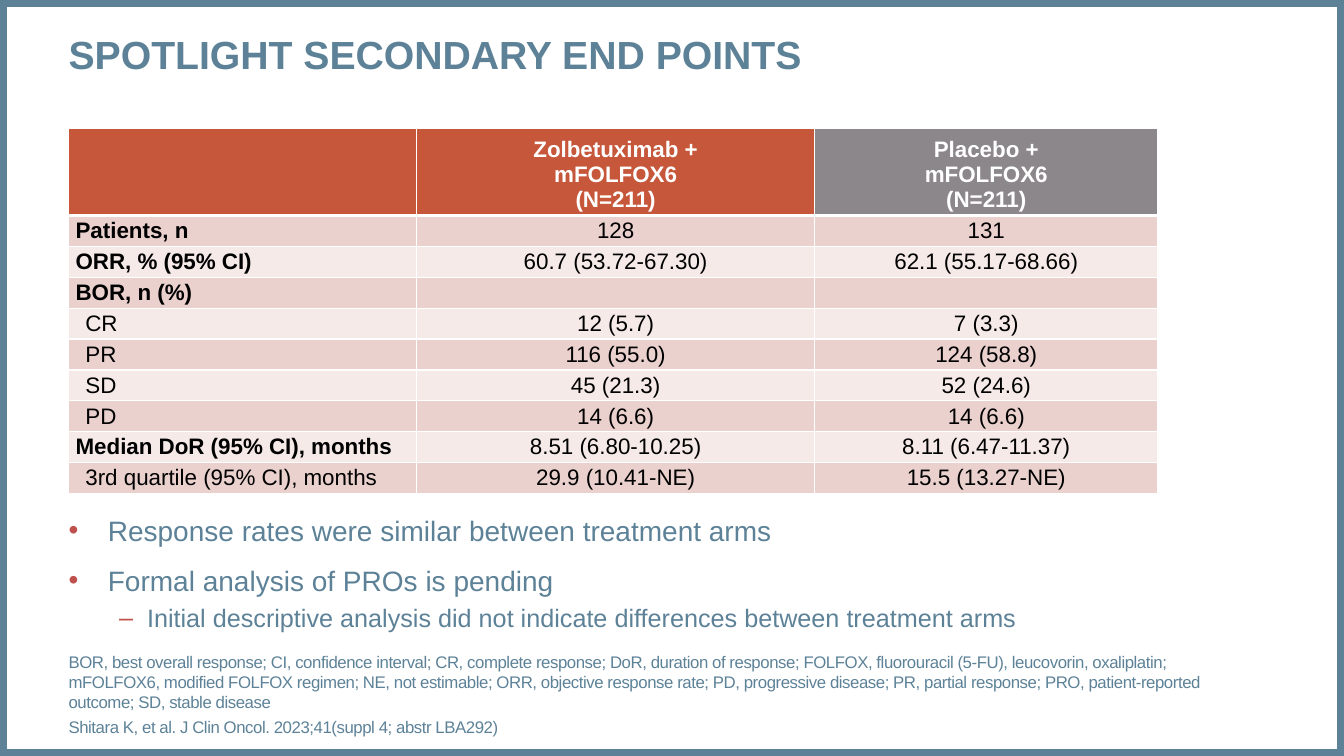
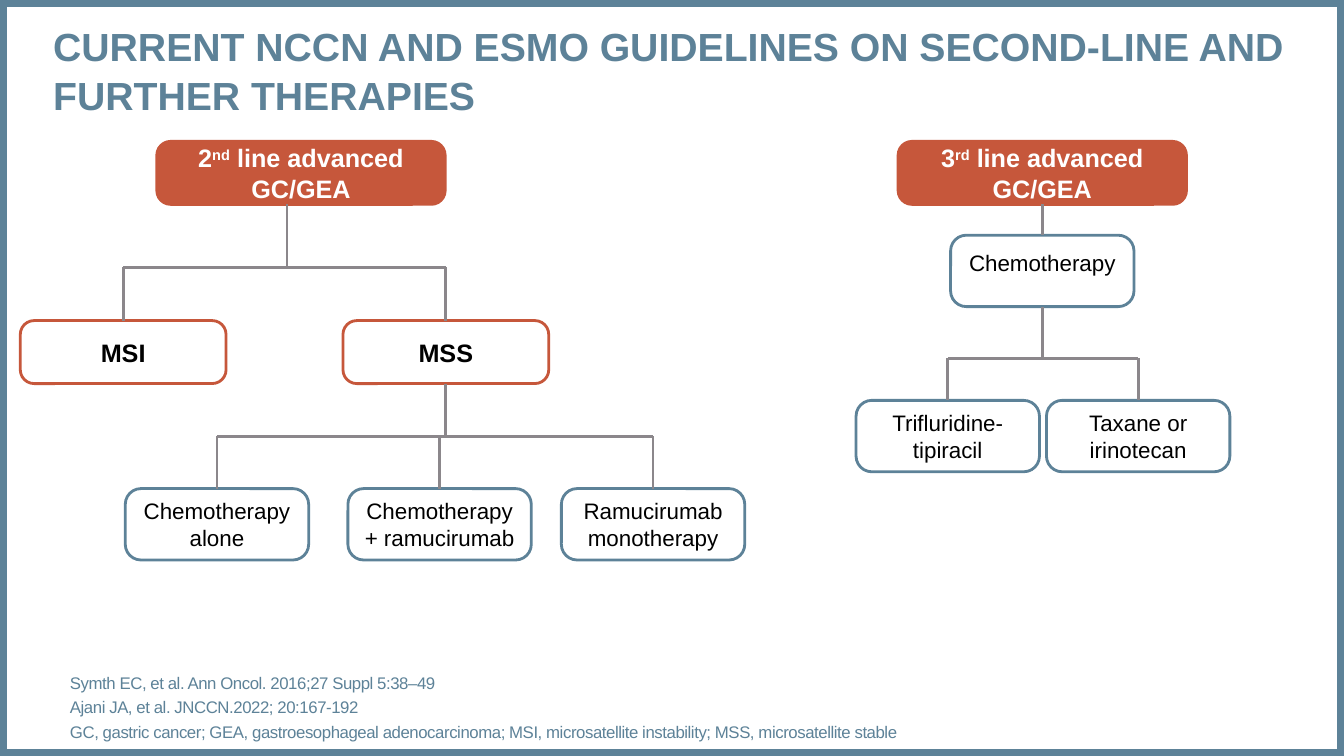
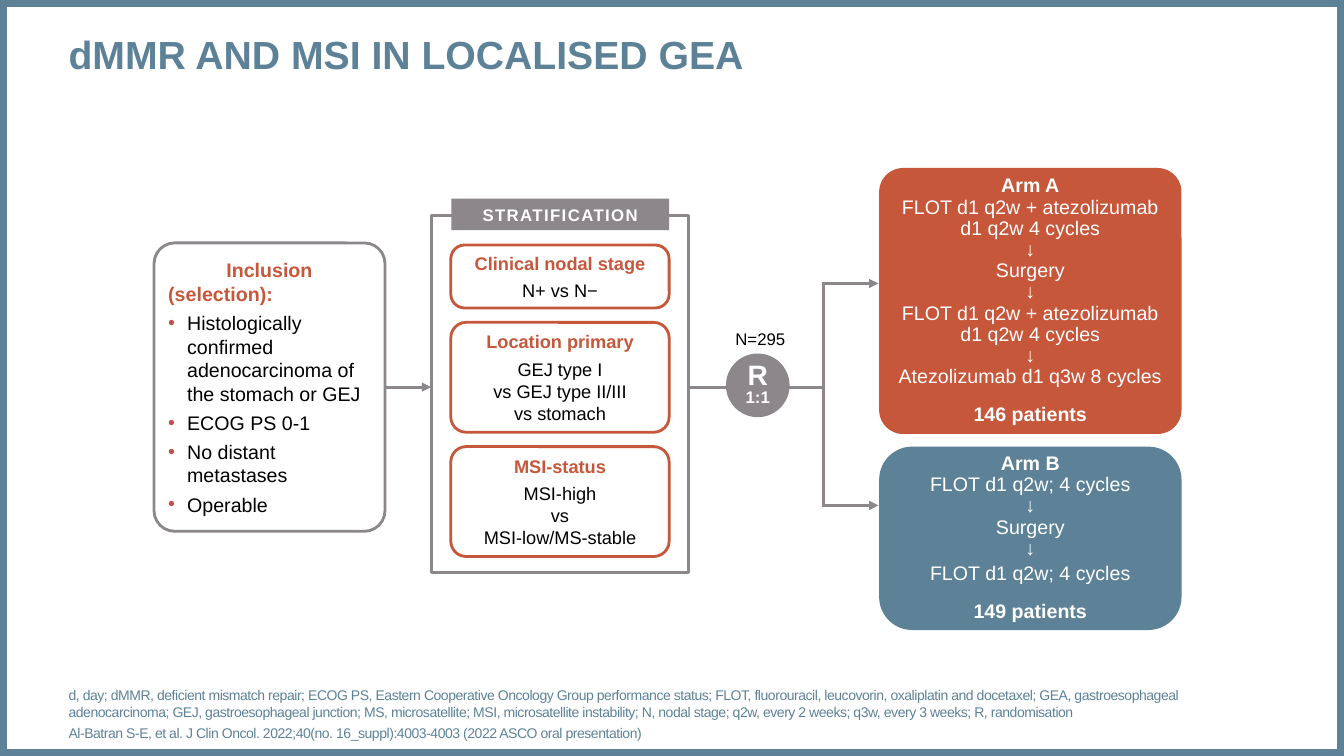
from lxml import etree
from pptx import Presentation
from pptx.dml.color import RGBColor
from pptx.enum.shapes import MSO_CONNECTOR, MSO_SHAPE
from pptx.enum.text import MSO_ANCHOR, PP_ALIGN
from pptx.oxml.ns import qn
from pptx.util import Pt

CENTER, RIGHT = PP_ALIGN.CENTER, PP_ALIGN.RIGHT
TOP, MIDDLE, BOTTOM = MSO_ANCHOR.TOP, MSO_ANCHOR.MIDDLE, MSO_ANCHOR.BOTTOM
RECT, ROUND, OVAL = MSO_SHAPE.RECTANGLE, MSO_SHAPE.ROUNDED_RECTANGLE, MSO_SHAPE.OVAL
STRAIGHT = MSO_CONNECTOR.STRAIGHT
SIDE_TOP, SIDE_BOTTOM, SIDE_RIGHT = 0, 2, 3

BLUE = RGBColor(0x5D, 0x82, 0x98)
RUST = RGBColor(0xC6, 0x57, 0x3B)
GREY = RGBColor(0x8B, 0x87, 0x8B)
RED = RGBColor(0xC0, 0x50, 0x4D)
ROSE = RGBColor(0xEA, 0xD1, 0xCE)
PALE = RGBColor(0xF5, 0xEA, 0xE8)
WHITE = RGBColor(0xFF, 0xFF, 0xFF)
BLACK = RGBColor(0, 0, 0)

FONT = "Arial"
WIDTH, HEIGHT = 960, 540
LEFT = 49

TITLE = {"size": Pt(28), "bold": True, "color": BLUE, "line_spacing": 1.05}
FOOTNOTE = {"size": Pt(12), "color": BLUE, "spc": -30, "space_before": Pt(3)}
HEADING = {"size": Pt(18), "bold": True, "color": WHITE, "alignment": CENTER}
GROUP = {**HEADING, "color": BLACK}
THERAPY = {"size": Pt(16), "color": BLACK, "alignment": CENTER}
COLUMN_HEAD = {**THERAPY, "bold": True, "color": WHITE}
CARD = {"size": Pt(13), "color": BLACK, "alignment": CENTER}
ARM = {"size": Pt(14), "color": WHITE, "alignment": CENTER, "line_spacing": 0.9}


class Deck:
    """Holds the shared style and the slide being built."""

    def __init__(self):
        self.prs = Presentation()
        self.prs.slide_width, self.prs.slide_height = Pt(WIDTH), Pt(HEIGHT)
        self.shapes = None

    def slide(self, title, x=LEFT, y=20, w=863):
        self.shapes = self.prs.slides.add_slide(self.prs.slide_layouts[6]).shapes
        self.box(RECT, 0, 0, WIDTH, HEIGHT, line=BLUE, weight=10)
        self.text(x, y, w, 68, [title], **TITLE)

    def set_text(self, frame, lines, anchor=TOP, insets=(0, 0), wrap=True, **style):
        side, edge = Pt(insets[0]), Pt(insets[1])
        layout = {"word_wrap": wrap, "vertical_anchor": anchor,
                  "margin_left": side, "margin_right": side,
                  "margin_top": edge, "margin_bottom": edge}
        for key, value in layout.items():
            setattr(frame, key, value)
        self.paragraphs(frame, lines, **style)

    def paragraphs(self, frame, lines, **style):
        """Each line is a text, a list of runs, or (either, format values)."""
        for i, line in enumerate(lines):
            content, extra = line if isinstance(line, tuple) else (line, {})
            look = {**style, **extra}
            paragraph = frame.add_paragraph() if i else frame.paragraphs[0]
            self.indent(paragraph, look)
            for key in ("alignment", "line_spacing", "space_before"):
                if key in look and (i or key != "space_before"):
                    setattr(paragraph, key, look[key])
            runs = content if isinstance(content, list) else [(content, {})]
            for words, run_extra in runs:
                self.run(paragraph, words, {**look, **run_extra})

    def indent(self, paragraph, look):
        if "indent" not in look:
            return
        margin, hanging = look["indent"]
        props = paragraph._p.get_or_add_pPr()
        props.set("marL", str(Pt(margin)))
        props.set("indent", str(Pt(-hanging)))
        if "bullet" in look:
            colour = etree.SubElement(props, qn("a:buClr"))
            etree.SubElement(colour, qn("a:srgbClr"), val=str(RED))
            etree.SubElement(props, qn("a:buFont"), typeface=FONT)
            etree.SubElement(props, qn("a:buChar"), char=look["bullet"])

    def run(self, paragraph, words, look):
        run = paragraph.add_run()
        run.text = words
        font = {"name": FONT, "size": look["size"], "bold": look.get("bold", False)}
        for key, value in font.items():
            setattr(run.font, key, value)
        run.font.color.rgb = look["color"]
        for key in ("spc", "baseline"):
            if key in look:
                run._r.get_or_add_rPr().set(key, str(look[key]))

    def text(self, x, y, w, h, lines, **style):
        box = self.shapes.add_textbox(Pt(x), Pt(y), Pt(w), Pt(h))
        self.set_text(box.text_frame, lines, **style)

    def box(self, kind, x, y, w, h, lines=(), fill=None, line=None, weight=2,
            corner=None, anchor=MIDDLE, insets=(6, 3.6), **style):
        shape = self.shapes.add_shape(kind, Pt(x), Pt(y), Pt(w), Pt(h))
        shape.shadow.inherit = False
        if corner is not None:
            shape.adjustments[0] = corner
        for part, colour in ((shape.fill, fill), (shape.line.fill, line)):
            if colour is None:
                part.background()
            else:
                part.solid()
                part.fore_color.rgb = colour
        if line is not None:
            shape.line.width = Pt(weight)
        if lines:
            self.set_text(shape.text_frame, lines, anchor, insets, **style)
        return shape

    def node(self, x, y, w, h, lines, fill=WHITE, line=BLUE, **style):
        return self.box(ROUND, x, y, w, h, lines, fill, line, corner=0.22, **style)

    def line(self, x1, y1, x2, y2, weight=2.0, arrow=False, start=None, end=None):
        """start and end are (shape, side) pairs to join."""
        link = self.shapes.add_connector(STRAIGHT, Pt(x1), Pt(y1), Pt(x2), Pt(y2))
        link.line.color.rgb = GREY
        link.line.width = Pt(weight)
        if start:
            link.begin_connect(*start)
        if end:
            link.end_connect(*end)
        props = link._element.spPr
        if arrow:
            etree.SubElement(props.find(qn("a:ln")), qn("a:tailEnd"), type="triangle")
        etree.SubElement(props, qn("a:effectLst"))

    def branch(self, parent, children, bar_y, trunk_x=None):
        """A trunk below the parent, a bar, and a drop to each child."""
        foot = parent.top.pt + parent.height.pt
        if trunk_x is None:
            middle = parent.left.pt + parent.width.pt / 2
            self.line(middle, foot, middle, bar_y, start=(parent, SIDE_BOTTOM))
        else:
            self.line(trunk_x, foot, trunk_x, bar_y)
        centres = [child.left.pt + child.width.pt / 2 for child in children]
        self.line(min(centres), bar_y, max(centres), bar_y)
        for child, x in zip(children, centres):
            self.line(x, bar_y, x, child.top.pt, end=(child, SIDE_TOP))

    def cell(self, cell, lines, fill, bottom=1, anchor=MIDDLE, edge=0, **style):
        props = cell._tc.get_or_add_tcPr()
        for side, weight in (("L", 1), ("R", 1), ("T", 1), ("B", bottom)):
            border = etree.SubElement(props, qn("a:ln" + side), w=str(Pt(weight)))
            solid = etree.SubElement(border, qn("a:solidFill"))
            etree.SubElement(solid, qn("a:srgbClr"), val=str(WHITE))
        cell.fill.solid()
        cell.fill.fore_color.rgb = fill
        layout = {"margin_left": Pt(5), "margin_right": Pt(5), "margin_top": Pt(edge),
                  "margin_bottom": Pt(edge), "vertical_anchor": anchor}
        for key, value in layout.items():
            setattr(cell, key, value)
        self.paragraphs(cell.text_frame, lines, **style)


def end_points(deck):
    deck.slide("SPOTLIGHT SECONDARY END POINTS")

    # Results table: label, treatment, placebo, whether the label is a main one
    heads = [([], RUST), (["Zolbetuximab +", "mFOLFOX6", "(N=211)"], RUST),
             (["Placebo +", "mFOLFOX6", "(N=211)"], GREY)]
    results = [
        ("Patients, n", "128", "131", True),
        ("ORR, % (95% CI)", "60.7 (53.72-67.30)", "62.1 (55.17-68.66)", True),
        ("BOR, n (%)", "", "", True),
        ("CR", "12 (5.7)", "7 (3.3)", False),
        ("PR", "116 (55.0)", "124 (58.8)", False),
        ("SD", "45 (21.3)", "52 (24.6)", False),
        ("PD", "14 (6.6)", "14 (6.6)", False),
        ("Median DoR (95% CI), months", "8.51 (6.80-10.25)", "8.11 (6.47-11.37)", True),
        ("3rd quartile (95% CI), months", "29.9 (10.41-NE)", "15.5 (13.27-NE)", False),
    ]
    widths, head_height, row_height = (248.5, 284.5, 245), 60, 22.1
    table = deck.shapes.add_table(
        len(results) + 1, len(widths), Pt(LEFT), Pt(91.5), Pt(sum(widths)),
        Pt(head_height + row_height * len(results))).table
    for column, width in zip(table.columns, widths):
        column.width = Pt(width)
    for i, row in enumerate(table.rows):
        row.height = Pt(row_height if i else head_height)
    for column, (lines, fill) in enumerate(heads):
        deck.cell(table.cell(0, column), lines, fill, bottom=3, anchor=BOTTOM, edge=2.4,
                  **COLUMN_HEAD)
    for i, (label, *values, main_label) in enumerate(results, 1):
        fill = ROSE if i % 2 else PALE
        deck.cell(table.cell(i, 0), [label], fill, size=Pt(16), color=BLACK,
                  bold=main_label, indent=(0 if main_label else 7, 0))
        for column, value in enumerate(values, 1):
            deck.cell(table.cell(i, column), [value] if value else [], fill, **THERAPY)

    # Findings
    deck.text(LEFT, 366.5, 863, 91, [
        "Response rates were similar between treatment arms",
        "Formal analysis of PROs is pending",
        ("Initial descriptive analysis did not indicate differences between treatment arms",
         {"size": Pt(18), "bullet": "–", "indent": (56, 20), "space_before": Pt(4)}),
    ], size=Pt(20), color=BLUE, bullet="•", indent=(28, 28), space_before=Pt(12))
    deck.text(LEFT, 497, 834, 29, [
        "BOR, best overall response; CI, confidence interval; CR, complete response; "
        "DoR, duration of response; FOLFOX, fluorouracil (5-FU), leucovorin, oxaliplatin; "
        "mFOLFOX6, modified FOLFOX regimen; NE, not estimable; ORR, objective response rate; "
        "PD, progressive disease; PR, partial response; PRO, patient-reported outcome; "
        "SD, stable disease",
        "Shitara K, et al. J Clin Oncol. 2023;41(suppl 4; abstr LBA292)",
    ], anchor=BOTTOM, **FOOTNOTE)


def guidelines(deck):
    deck.slide("CURRENT NCCN AND ESMO GUIDELINES ON SECOND-LINE AND FURTHER THERAPIES",
               x=38, y=14, w=911)

    # Headings of both trees
    second, third = [
        deck.node(x, 101, 206, 45,
                  [[(number, {}), (suffix, {"baseline": 30000}),
                    (" line advanced GC/GEA", {})]],
                  RUST, RUST, **HEADING)
        for x, number, suffix in ((112, "2", "nd"), (641.5, "3", "rd"))]

    # Second line
    msi, mss = [deck.node(x, 229, 147, 45, [name], line=RUST, **GROUP)
                for x, name in ((14.5, "MSI"), (245, "MSS"))]
    second_options = [
        deck.node(x, 349, 131, 51, lines, **THERAPY)
        for x, lines in ((89.5, ["Chemotherapy", "alone"]),
                         (248.5, ["Chemotherapy + ramucirumab"]),
                         (401, ["Ramucirumab monotherapy"]))]
    deck.branch(second, [msi, mss], 191, trunk_x=205)
    deck.branch(mss, second_options, 311.5)

    # Third line
    chemotherapy = deck.node(679, 168, 131, 51, ["Chemotherapy"], anchor=TOP,
                             insets=(6, 7), **THERAPY)
    third_options = [deck.node(x, 286, 131, 51, [name], **THERAPY)
                     for x, name in ((611.5, "Trifluridine-tipiracil"),
                                     (747.5, "Taxane or irinotecan"))]
    deck.line(744.5, 146, 744.5, 168, start=(third, SIDE_BOTTOM),
              end=(chemotherapy, SIDE_TOP))
    deck.branch(chemotherapy, third_options, 256)

    deck.text(50, 480, 801, 50, [
        "Symth EC, et al. Ann Oncol. 2016;27 Suppl 5:38–49",
        "Ajani JA, et al. JNCCN.2022; 20:167-192",
        "GC, gastric cancer; GEA, gastroesophageal adenocarcinoma; "
        "MSI, microsatellite instability; MSS, microsatellite stable",
    ], anchor=MIDDLE, **FOOTNOTE)


def localised_trial(deck):
    deck.slide("dMMR AND MSI IN LOCALISED GEA")
    flow_y, fork_x, weight = 276.5, 588, 2.25
    bold = {"bold": True}
    rust_title = {"bold": True, "color": RUST}

    # Inclusion criteria
    criteria = ["Histologically confirmed adenocarcinoma of the stomach or GEJ",
                "ECOG PS 0-1", "No distant metastases", "Operable"]
    listed = {"bullet": "•", "indent": (13.5, 13.5), "space_before": Pt(4)}
    inclusion = deck.box(
        ROUND, 110, 173.5, 165, 206,
        [("Inclusion", rust_title), ("(selection):", rust_title)]
        + [(criterion, listed) for criterion in criteria],
        WHITE, GREY, corner=0.09, insets=(5.8, 3.6), size=Pt(14), color=BLACK)

    # Stratification factors
    deck.box(RECT, 308, 154, 184, 255, line=GREY, weight=weight)
    deck.box(RECT, 322.5, 142, 155.5, 22.5, ["STRATIFICATION"], GREY, insets=(0, 0),
             size=Pt(12), bold=True, color=WHITE, alignment=CENTER, spc=100)
    factors = [("Clinical nodal stage", ["N+ vs N−"], 45, 0.22),
               ("Location primary", ["GEJ type I", "vs GEJ type II/III", "vs stomach"],
                78.5, 0.14),
               ("MSI-status", ["MSI-high", "vs", "MSI-low/MS-stable"], 78.5, 0.14)]
    y = 175
    for name, (first, *rest), height, corner in factors:
        deck.box(ROUND, 322, y, 156, height,
                 [(name, rust_title), (first, {"space_before": Pt(4)}), *rest],
                 WHITE, RUST, corner=corner, **CARD)
        y += height + 10.25

    # Flow and randomisation
    deck.line(275, flow_y, 308, flow_y, weight, True, start=(inclusion, SIDE_RIGHT))
    deck.line(492, flow_y, fork_x, flow_y, weight)
    arm_ys = (202.5, 361)
    deck.line(fork_x, arm_ys[0], fork_x, arm_ys[1], weight)
    for arm_y in arm_ys:
        deck.line(fork_x - 1, arm_y, 627.5, arm_y, weight, True)
    deck.box(OVAL, 518.5, 252.5, 45.5, 45.5, [("R", {"size": Pt(20)}), "1:1"], GREY,
             insets=(0, 0), size=Pt(12), bold=True, color=WHITE, alignment=CENTER,
             line_spacing=0.8)
    deck.text(525, 235, 36, 14.5, ["N=295"], wrap=False, size=Pt(12), color=BLACK,
              alignment=RIGHT)

    # Treatment arms
    flot = ["FLOT d1 q2w + atezolizumab", "d1 q2w 4 cycles"]
    flot_only = "FLOT d1 q2w; 4 cycles"
    total = {"bold": True, "space_before": Pt(12)}
    deck.box(ROUND, 628, 120, 216, 190,
             [("Arm A", bold), *flot, "↓", "Surgery", "↓", *flot, "↓",
              "Atezolizumab d1 q3w 8 cycles", ("146 patients", total)],
             RUST, corner=0.09, **ARM)
    deck.box(ROUND, 628, 319, 216, 131,
             [("Arm B", bold), flot_only, "↓", "Surgery", "↓",
              (flot_only, {"space_before": Pt(3)}), ("149 patients", total)],
             BLUE, corner=0.18, **ARM)

    deck.text(LEFT, 500.5, 806, 29, [
        "d, day; dMMR, deficient mismatch repair; ECOG PS, Eastern Cooperative Oncology Group "
        "performance status; FLOT, fluorouracil, leucovorin, oxaliplatin and docetaxel; "
        "GEA, gastroesophageal adenocarcinoma; GEJ, gastroesophageal junction; "
        "MS, microsatellite; MSI, microsatellite instability; N, nodal stage; "
        "q2w, every 2 weeks; q3w, every 3 weeks; R, randomisation",
        "Al-Batran S-E, et al. J Clin Oncol. 2022;40(no. 16_suppl):4003-4003 "
        "(2022 ASCO oral presentation)",
    ], anchor=BOTTOM, **{**FOOTNOTE, "size": Pt(10)})


def main():
    deck = Deck()
    end_points(deck)
    guidelines(deck)
    localised_trial(deck)
    deck.prs.save("out.pptx")


if __name__ == "__main__":
    main()
